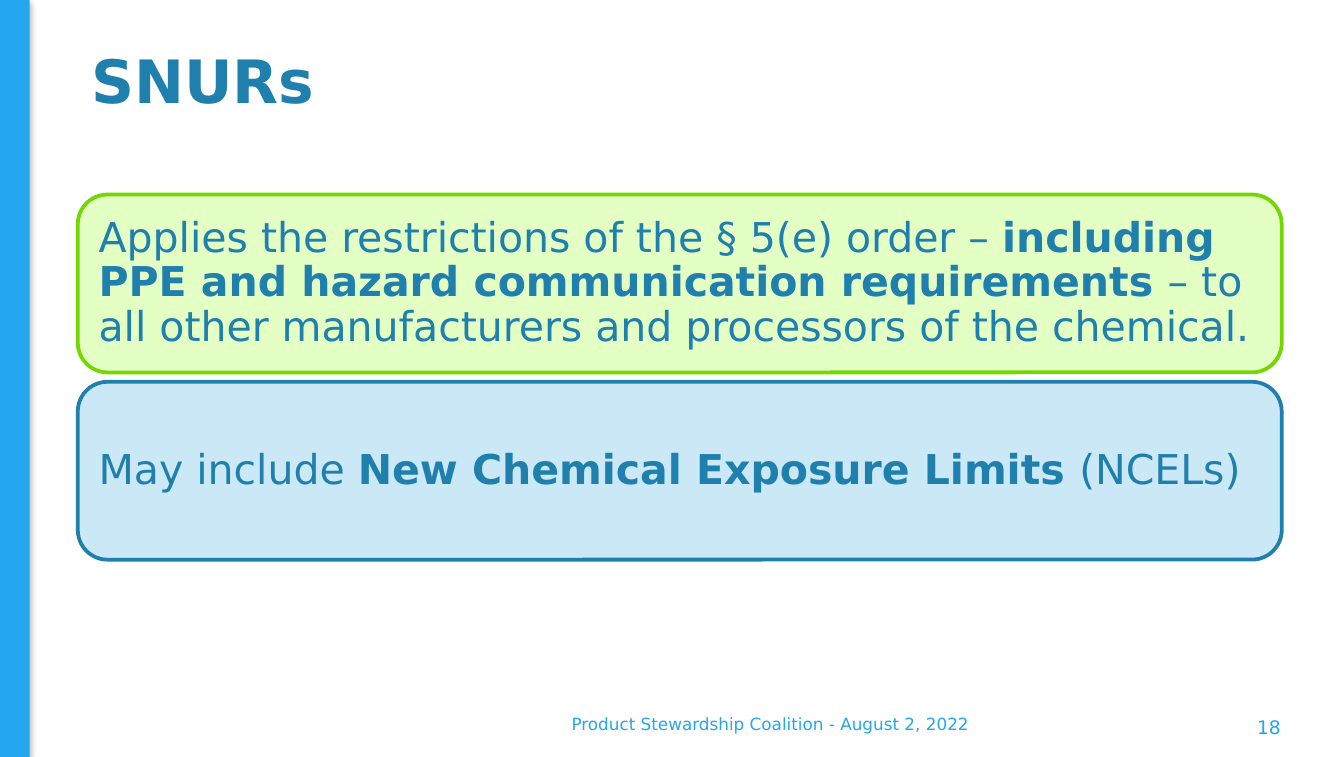
from dataclasses import dataclass

from lxml import etree
from pptx import Presentation
from pptx.dml.color import RGBColor
from pptx.enum.shapes import MSO_SHAPE
from pptx.enum.text import MSO_ANCHOR, PP_ALIGN
from pptx.oxml.ns import qn
from pptx.util import Pt

RECTANGLE = MSO_SHAPE.RECTANGLE
ROUNDED = MSO_SHAPE.ROUNDED_RECTANGLE
MIDDLE = MSO_ANCHOR.MIDDLE
LEFT, CENTER, RIGHT = PP_ALIGN.LEFT, PP_ALIGN.CENTER, PP_ALIGN.RIGHT

PAGE_WIDTH, PAGE_HEIGHT = 720, 405.36


@dataclass(frozen=True)
class Theme:
    font: str = "DejaVu Sans"
    blue: str = "1F80AE"
    sky: str = "24A7EF"
    pale_blue: str = "CBE8F6"
    green: str = "75D701"
    pale_green: str = "E4FFC4"
    shadow: str = "000000"
    title_size: float = 32
    body_size: float = 22
    footer_size: float = 9
    number_size: float = 10


THEME = Theme()

CARDS = [
    (THEME.pale_green, THEME.green, [
        ("Applies the restrictions of the § 5(e) order – ", False),
        ("including PPE and hazard communication requirements ", True),
        ("– to all other manufacturers and processors of the chemical.", False),
    ]),
    (THEME.pale_blue, THEME.blue, [
        ("May include ", False),
        ("New Chemical Exposure Limits ", True),
        ("(NCELs)", False),
    ]),
]


def color(value):
    return RGBColor.from_string(value)


def write_text(shape, spans, *, size, ink, align=LEFT, spacing=1.0, inset=7.2):
    frame = shape.text_frame
    frame.word_wrap = True
    frame.vertical_anchor = MIDDLE
    frame.margin_left = frame.margin_right = Pt(inset)
    para = frame.paragraphs[0]
    para.alignment = align
    para.line_spacing = spacing
    for text, bold in spans:
        span = para.add_run()
        span.text = text
        span.font.name = THEME.font
        span.font.size = Pt(size)
        span.font.bold = bold
        span.font.color.rgb = color(ink)


def add_label(page, box, text, *, bold=False, **text_format):
    label = page.shapes.add_textbox(*map(Pt, box))
    write_text(label, [(text, bold)], **text_format)


def add_block(page, kind, box, fill):
    block = page.shapes.add_shape(kind, *map(Pt, box))
    block.shadow.inherit = False
    block.fill.solid()
    block.fill.fore_color.rgb = color(fill)
    return block


def add_sidebar(page, box):
    bar = add_block(page, RECTANGLE, box, THEME.sky)
    bar.line.fill.background()
    effects = bar.element.spPr.find(qn("a:effectLst"))
    shadow = etree.SubElement(
        effects, qn("a:outerShdw"), blurRad=str(Pt(3.1)), dist=str(Pt(1.8)),
        dir="5400000", rotWithShape="0")
    tint = etree.SubElement(shadow, qn("a:srgbClr"), val=THEME.shadow)
    etree.SubElement(tint, qn("a:alpha"), val="35000")


def add_cards(page, box, gap):
    left, top, width, height = box
    card_height = (height - gap * (len(CARDS) - 1)) / len(CARDS)
    for index, (fill, outline, spans) in enumerate(CARDS):
        card_top = top + index * (card_height + gap)
        card = add_block(page, ROUNDED, (left, card_top, width, card_height), fill)
        card.line.color.rgb = color(outline)
        card.line.width = Pt(2)
        write_text(card, spans, size=THEME.body_size, ink=THEME.blue,
                   spacing=0.9, inset=6.5)


def add_footer(page, box):
    left, top, width, height = box
    add_label(page, (left, top, 491, height),
              "Product Stewardship Coalition - August 2, 2022",
              size=THEME.footer_size, ink=THEME.sky, align=CENTER)
    number_width = 72.7
    add_label(page, (left + width - number_width, top + 5.4, number_width, 14.4),
              "18", size=THEME.number_size, ink=THEME.sky, align=RIGHT)


def main():
    deck = Presentation()
    deck.slide_width, deck.slide_height = Pt(PAGE_WIDTH), Pt(PAGE_HEIGHT)
    page = deck.slides.add_slide(deck.slide_layouts[6])
    add_sidebar(page, (0, 0, 16, PAGE_HEIGHT))
    add_label(page, (41.7, 14.4, 645, 61), "SNURs", bold=True,
              size=THEME.title_size, ink=THEME.blue, spacing=0.9)
    add_cards(page, (41.7, 104.2, 645, 195.5), gap=5)
    add_footer(page, (167, 376.9, 526.2, 21.6))
    deck.save("out.pptx")


if __name__ == "__main__":
    main()
